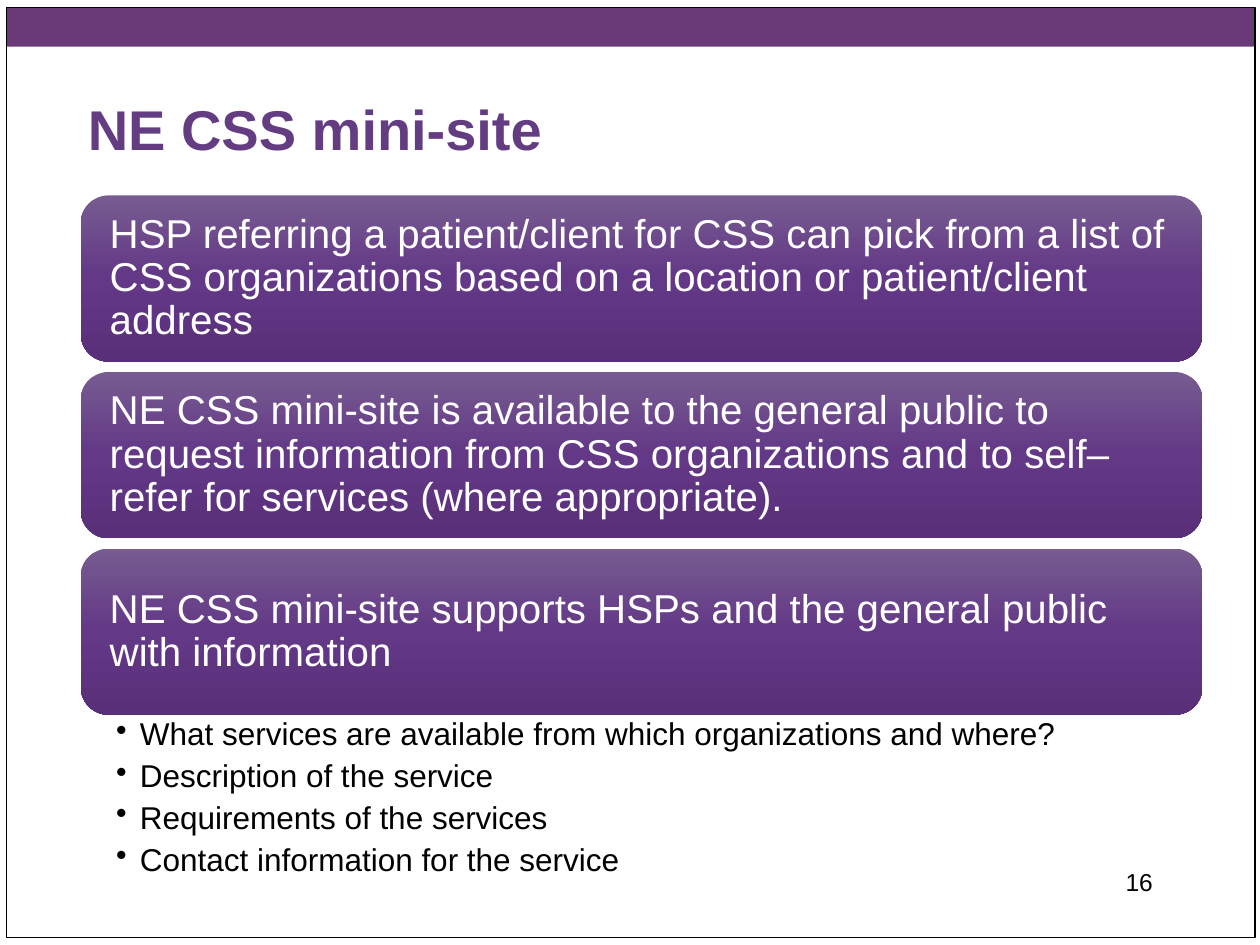
"""Build the NE CSS mini-site slide with three cards and a bullet list."""
import pptx
import pptx.dml.color
import pptx.enum.shapes
import pptx.enum.text
import pptx.oxml
import pptx.oxml.ns
import pptx.util

Cm, Pt = pptx.util.Cm, pptx.util.Pt
Kind = pptx.enum.shapes.MSO_SHAPE
Side = pptx.enum.text.MSO_ANCHOR
Align = pptx.enum.text.PP_ALIGN

TITLE = "NE CSS mini-site"
CARDS = [
    "HSP referring a patient/client for CSS can pick from a list of CSS organizations "
    "based on a location or patient/client address",
    "NE CSS mini-site is available to the general public to request information from "
    "CSS organizations and to self–refer for services (where appropriate).",
    "NE CSS mini-site supports HSPs and the general public with information",
]
ITEMS = [
    "What services are available from which organizations and where?",
    "Description of the service",
    "Requirements of the services",
    "Contact information for the service",
]
PAGE = "16"
STOPS = [(0, "775B91"), (50, "633886"), (100, "592F7A")]
LEFT, WIDE = 1.63, 22.61
TOP, HIGH, STEP = 3.94, 3.35, 3.56


def color(code):
    return pptx.dml.color.RGBColor.from_string(code)


def write(shape, lines, size, code, pads, side=Side.TOP, align=Align.LEFT,
          bold=False, space=1.0, after=0):
    frame = shape.text_frame
    frame.word_wrap = True
    frame.vertical_anchor = side
    (frame.margin_left, frame.margin_top,
     frame.margin_right, frame.margin_bottom) = [Cm(pad) for pad in pads]
    for num, line in enumerate(lines):
        para = frame.add_paragraph() if num else frame.paragraphs[0]
        para.alignment = align
        para.line_spacing = space
        para.space_after = Pt(after)
        run = para.add_run()
        run.text = line
        run.font.name = "Arial"
        run.font.size = Pt(size)
        run.font.bold = bold
        run.font.color.rgb = color(code)
    return frame


def shade(shape):
    marks = "".join(f'<a:gs pos="{pos * 1000}"><a:srgbClr val="{code}"/></a:gs>'
                    for pos, code in STOPS)
    shape.fill.gradient()
    old = shape._element.spPr.find(pptx.oxml.ns.qn("a:gradFill"))
    new = pptx.oxml.parse_xml(
        f'<a:gradFill {pptx.oxml.ns.nsdecls("a")} rotWithShape="1">'
        f'<a:gsLst>{marks}</a:gsLst><a:lin ang="5400000" scaled="0"/></a:gradFill>')
    old.getparent().replace(old, new)


def bullet(para):
    props = para._p.get_or_add_pPr()
    props.set("marL", str(Cm(0.48)))
    props.set("indent", str(-Cm(0.48)))
    props.append(pptx.oxml.parse_xml(
        f'<a:buChar {pptx.oxml.ns.nsdecls("a")} char="•"/>'))


def main():
    deck = pptx.Presentation()
    deck.slide_width, deck.slide_height = Cm(25.4), Cm(19.05)
    shapes = deck.slides.add_slide(deck.slide_layouts[6]).shapes

    def block(kind, *box):
        shape = shapes.add_shape(kind, *map(Cm, box))
        shape.shadow.inherit = False
        shape.line.fill.background()
        return shape

    def label(*box):
        return shapes.add_textbox(*map(Cm, box))

    band = block(Kind.RECTANGLE, 0.13, 0.15, 25.17, 0.79)
    band.fill.solid()
    band.fill.fore_color.rgb = color("693A77")

    edge = block(Kind.RECTANGLE, 0.13, 0.15, 25.17, 18.75)
    edge.fill.background()
    edge.line.color.rgb = color("000000")
    edge.line.width = Pt(0.75)

    inset = (0.25, 0.13, 0.25, 0.13)
    write(label(1.52, 0.86, 21.59, 2.54), [TITLE], 32, "633C82", inset,
          side=Side.BOTTOM, bold=True)

    for num, text in enumerate(CARDS):
        card = block(Kind.ROUNDED_RECTANGLE, LEFT, TOP + num * STEP, WIDE, HIGH)
        shade(card)
        write(card, [text], 23, "FFFFFF", (0.42,) * 4, side=Side.MIDDLE, space=0.9)

    foot = TOP + (len(CARDS) - 1) * STEP + HIGH
    frame = write(label(LEFT, foot, WIDE, 3.25), ITEMS, 18, "000000",
                  (0.71, 0.08, 0.46, 0.08), space=0.9, after=4.4)
    for para in frame.paragraphs:
        bullet(para)

    write(label(18.21, 17.35, 5.28, 1.27), [PAGE], 14, "000000", inset,
          align=Align.RIGHT)
    deck.save("out.pptx")


if __name__ == "__main__":
    main()
